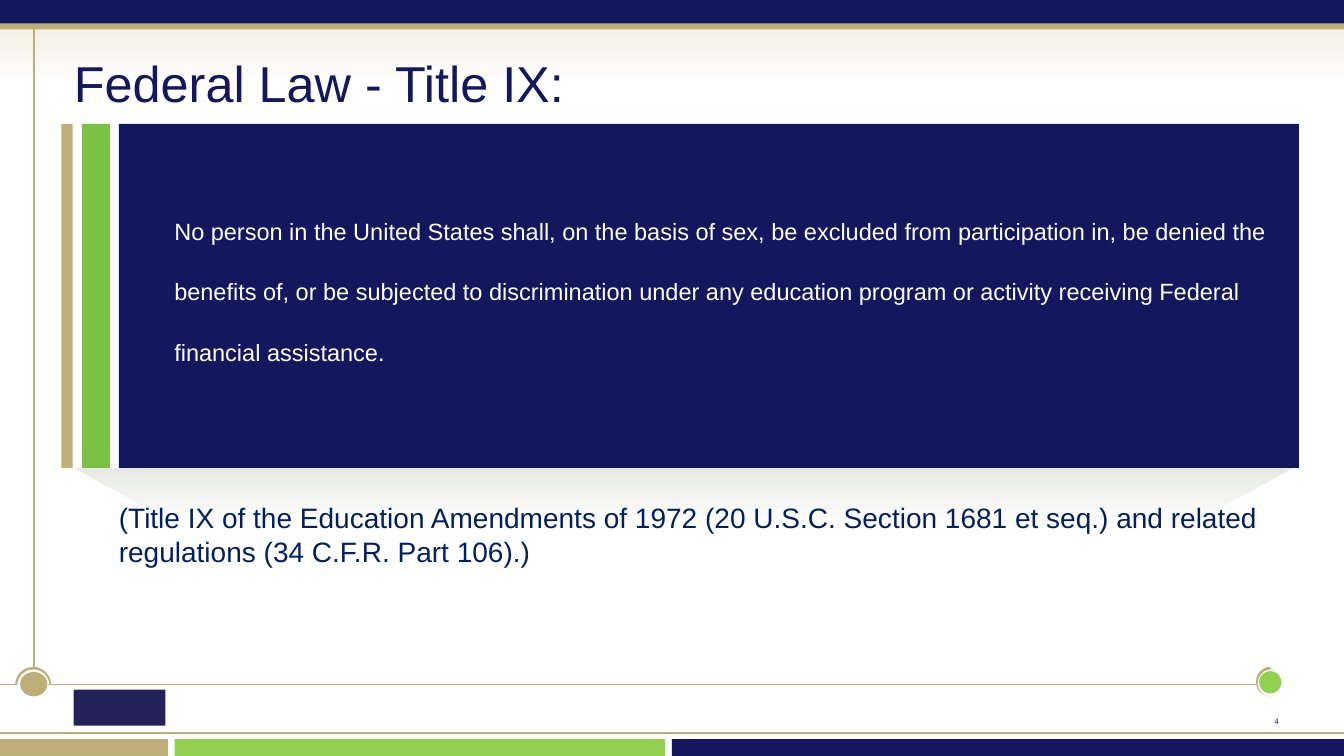
from dataclasses import dataclass
from typing import Optional

from lxml.etree import SubElement
from pptx import Presentation
from pptx.dml.color import RGBColor
from pptx.enum.shapes import MSO_CONNECTOR, MSO_SHAPE
from pptx.enum.text import MSO_ANCHOR, PP_ALIGN
from pptx.oxml.ns import qn
from pptx.util import Inches, Pt

NAVY = RGBColor(0x12, 0x17, 0x5E)
GOLD = RGBColor(0xBD, 0xAF, 0x77)
LIME = RGBColor(0x92, 0xD0, 0x50)
GREEN = RGBColor(0x7B, 0xC1, 0x43)
WHITE = RGBColor(0xFF, 0xFF, 0xFF)
CREAM = RGBColor(0xF2, 0xEF, 0xE4)
MIST = RGBColor(0xE7, 0xE9, 0xE5)
INK = RGBColor(0x00, 0x20, 0x60)
PLUM = RGBColor(0x23, 0x21, 0x5A)

WIDTH, HEIGHT = Inches(13.33), Inches(7.5)
COLS, ROWS = 160, 90
FONT = "Arial"


@dataclass
class Block:
    left: float
    top: float
    wide: float
    high: float
    fill: RGBColor
    fade: Optional[RGBColor] = None
    kind: MSO_SHAPE = MSO_SHAPE.RECTANGLE
    turn: int = 0


@dataclass
class Rule:
    left: float
    top: float
    right: float
    bottom: float


@dataclass
class Label:
    left: float
    top: float
    wide: float
    high: float
    text: str
    size: float
    color: RGBColor
    align: PP_ALIGN = PP_ALIGN.LEFT
    anchor: MSO_ANCHOR = MSO_ANCHOR.TOP


OVAL, ARC = MSO_SHAPE.OVAL, MSO_SHAPE.BLOCK_ARC

FRAME = [
    Block(0, 3.36, 160, 6.72, CREAM, WHITE),
    Block(0, 0, 160, 2.88, NAVY),
    Block(0, 2.8, 160, 0.72, GOLD),
    Block(0, 88, 20, 2, GOLD),
    Block(20.8, 88, 58.4, 2, LIME),
    Block(80, 88, 80, 2, NAVY),
    Block(8.76, 82.1, 10.92, 4.3, PLUM),
]
RULES = [
    Rule(4.04, 3.5, 4.04, 79.4),
    Rule(0, 81.5, 4.4, 81.5),
    Rule(6.1, 81.5, 149.5, 81.5),
    Rule(0, 87.25, 160, 87.25),
]
KNOBS = [
    Block(1.8, 79.4, 4.3, 4.3, GOLD, kind=ARC),
    Block(2.04, 79.7, 3.85, 3.95, WHITE, kind=OVAL),
    Block(2.4, 80, 3.25, 2.9, GOLD, kind=OVAL),
    Block(149.5, 79.4, 3.55, 3.5, GOLD, kind=ARC, turn=270),
    Block(149.75, 79.7, 3.25, 3.25, WHITE, kind=OVAL),
    Block(149.9, 79.9, 2.65, 2.65, LIME, kind=OVAL),
]
BARS = [
    Block(9.75, 14.75, 3.35, 40.95, GREEN),
    Block(7.3, 14.75, 1.35, 40.95, GOLD),
]
PANEL = Block(14.15, 14.75, 140.5, 40.95, NAVY)
SHADE = [(8.8, 55.7), (21.85, 62.75), (140.8, 62.75), (154, 55.7)]
LAW = (
    "No person in the United States shall, on the basis of sex, be excluded "
    "from participation in, be denied the benefits of, or be subjected to "
    "discrimination under any education program or activity receiving "
    "Federal financial assistance."
)
LABELS = [
    Label(8.8, 6.2, 145.2, 7.2, "Federal Law - Title IX:", 36, NAVY),
    Label(14.15, 59.6, 140.5, 8,
          "(Title IX of the Education Amendments of 1972 (20 U.S.C. Section "
          "1681 et seq.) and related regulations (34 C.F.R. Part 106).)",
          20, INK),
    Label(150.5, 84.9, 3, 2, "4", 5.5, NAVY, PP_ALIGN.CENTER,
          MSO_ANCHOR.MIDDLE),
]


def col(n: float) -> int:
    return round(WIDTH * n / COLS)


def row(n: float) -> int:
    return round(HEIGHT * n / ROWS)


def paint(shape, fill: RGBColor, fade: Optional[RGBColor] = None) -> None:
    shape.shadow.inherit = False
    shape.line.fill.background()
    if fade is None:
        shape.fill.solid()
        shape.fill.fore_color.rgb = fill
        return
    shape.fill.gradient()
    shape.fill.gradient_angle = 270
    for stop, color in zip(shape.fill.gradient_stops, (fill, fade)):
        stop.color.rgb = color


def add_block(slide, item: Block):
    shape = slide.shapes.add_shape(
        item.kind, col(item.left), row(item.top), col(item.wide), row(item.high))
    shape.rotation = item.turn
    paint(shape, item.fill, item.fade)
    return shape


def add_rule(slide, item: Rule) -> None:
    line = slide.shapes.add_connector(
        MSO_CONNECTOR.STRAIGHT, col(item.left), row(item.top),
        col(item.right), row(item.bottom))
    line.line.color.rgb = GOLD
    line.line.width = Pt(1)
    SubElement(line._element.spPr, qn("a:effectLst"))


def add_shade(slide) -> None:
    points = [(col(x), row(y)) for x, y in SHADE]
    pen = slide.shapes.build_freeform(*points[0])
    pen.add_line_segments(points[1:], close=True)
    paint(pen.convert_to_shape(), MIST, WHITE)


def write(frame, text: str, size: float, color: RGBColor, align: PP_ALIGN):
    frame.word_wrap = True
    para = frame.paragraphs[0]
    para.text = text
    para.alignment = align
    para.font.name = FONT
    para.font.size = Pt(size)
    para.font.color.rgb = color
    return para


def inset(frame, left: float, top: float, right: float) -> None:
    frame.margin_left, frame.margin_right = col(left), col(right)
    frame.margin_top, frame.margin_bottom = row(top), 0


def add_label(slide, item: Label) -> None:
    frame = slide.shapes.add_textbox(
        col(item.left), row(item.top), col(item.wide), row(item.high)).text_frame
    inset(frame, 0, 0, 0)
    frame.vertical_anchor = item.anchor
    write(frame, item.text, item.size, item.color, item.align)


def add_panel(slide) -> None:
    frame = add_block(slide, PANEL).text_frame
    inset(frame, 6.6, 7.3, 1.8)
    frame.vertical_anchor = MSO_ANCHOR.TOP
    para = write(frame, LAW, 16.8, WHITE, PP_ALIGN.LEFT)
    para.line_spacing = Pt(43)


def main() -> None:
    deck = Presentation()
    deck.slide_width, deck.slide_height = WIDTH, HEIGHT
    slide = deck.slides.add_slide(deck.slide_layouts[6])
    for item in FRAME:
        add_block(slide, item)
    for rule in RULES:
        add_rule(slide, rule)
    for item in KNOBS:
        add_block(slide, item)
    add_shade(slide)
    add_panel(slide)
    for item in BARS:
        add_block(slide, item)
    for label in LABELS:
        add_label(slide, label)
    deck.save("out.pptx")


if __name__ == "__main__":
    main()
